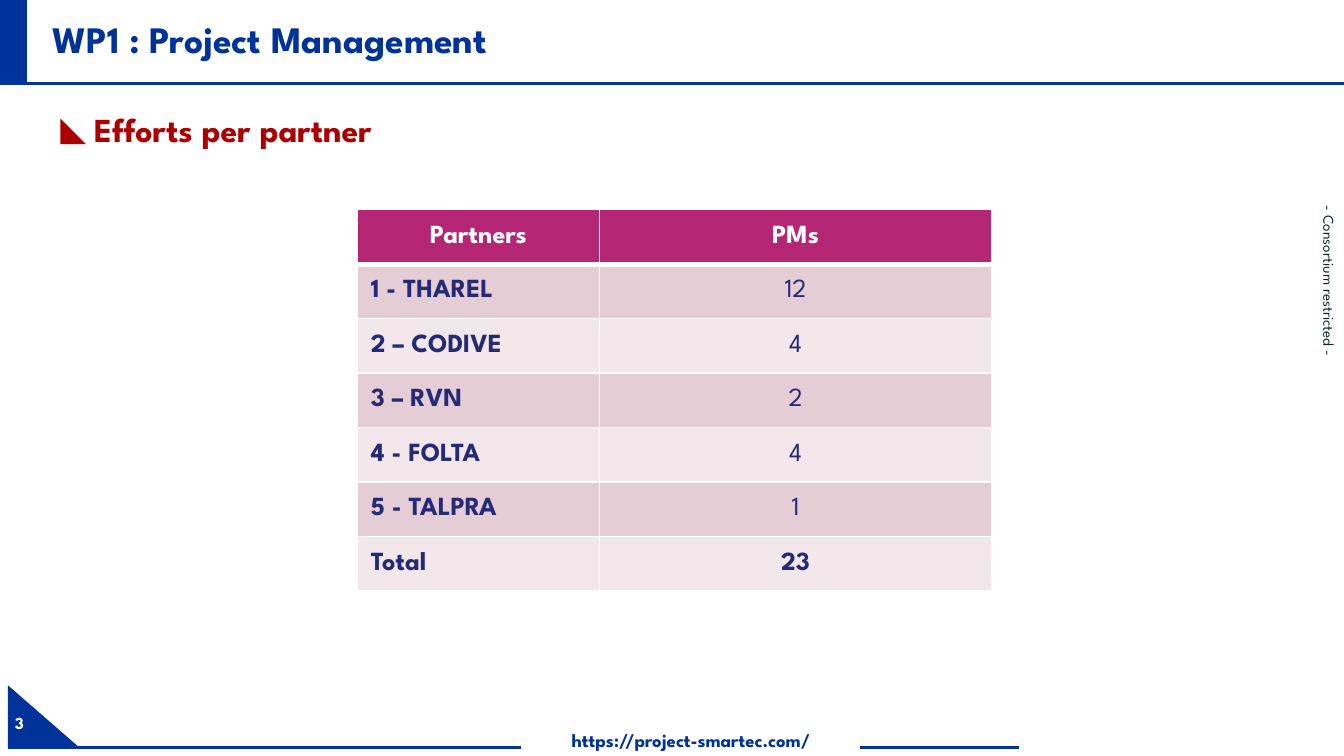
import pptx
import pptx.dml.color
import pptx.enum.shapes
import pptx.enum.text
import pptx.oxml.ns
import pptx.util
from lxml import etree

Inches = pptx.util.Inches
Pt = pptx.util.Pt
RGBColor = pptx.dml.color.RGBColor
SHAPE = pptx.enum.shapes.MSO_SHAPE
ALIGN = pptx.enum.text.PP_ALIGN
ANCHOR = pptx.enum.text.MSO_ANCHOR
qn = pptx.oxml.ns.qn

BLUE = RGBColor(0x00, 0x33, 0x99)
RED = RGBColor(0xAC, 0x00, 0x00)
NAVY = RGBColor(0x24, 0x2A, 0x75)
DARK = RGBColor(0x0C, 0x27, 0x2D)
MAGENTA = RGBColor(0xB4, 0x25, 0x73)
ROSE = RGBColor(0xE5, 0xCD, 0xD5)
PALE = RGBColor(0xF2, 0xE8, 0xEB)
WHITE = RGBColor(0xFF, 0xFF, 0xFF)

EFFORTS = [
    ("Partners", "PMs"),
    ("1 - THAREL", "12"),
    ("2 – CODIVE", "4"),
    ("3 – RVN", "2"),
    ("4 - FOLTA", "4"),
    ("5 - TALPRA", "1"),
    ("Total", "23"),
]


class Deck:
    """Holds the style and the current slide, and draws each kind of element."""

    font = "League Spartan"

    def __init__(self, width, height):
        self.prs = pptx.Presentation()
        self.prs.slide_width = Inches(width)
        self.prs.slide_height = Inches(height)
        self.s = self.prs.slides.add_slide(self.prs.slide_layouts[1])

    def run(self, p, text, size, color, bold=True):
        r = p.add_run()
        r.text = text
        r.font.name = self.font
        r.font.size = Pt(size)
        r.font.bold = bold
        r.font.color.rgb = color

    def shape(self, kind, *box):
        sp = self.s.shapes.add_shape(kind, *map(Inches, box))
        sp.shadow.inherit = False
        sp.fill.solid()
        sp.fill.fore_color.rgb = BLUE
        sp.line.fill.background()

    def line(self, x1, x2, y):
        c = self.s.shapes.add_connector(
            pptx.enum.shapes.MSO_CONNECTOR.STRAIGHT,
            Inches(x1), Inches(y), Inches(x2), Inches(y))
        c.line.color.rgb = BLUE
        c.line.width = Pt(1.5)
        etree.SubElement(c.element.spPr, qn("a:effectLst"))

    def text(self, box, insets, text, size, color, bold=True,
             align=ALIGN.LEFT, anchor=ANCHOR.TOP, vert=None):
        tf = self.s.shapes.add_textbox(*map(Inches, box)).text_frame
        tf.word_wrap = True
        tf.vertical_anchor = anchor
        tf.margin_left, tf.margin_top, tf.margin_right, tf.margin_bottom = map(Inches, insets)
        if vert:
            tf._txBody.bodyPr.set("vert", vert)
        p = tf.paragraphs[0]
        p.alignment = align
        self.run(p, text, size, color, bold)

    def placeholder(self, idx, box, anchor):
        sp = self.s.placeholders[idx]
        sp.left, sp.top, sp.width, sp.height = map(Inches, box)
        tf = sp.text_frame
        tf.auto_size = pptx.enum.text.MSO_AUTO_SIZE.NONE
        tf.vertical_anchor = anchor
        p = tf.paragraphs[0]
        p.alignment = ALIGN.LEFT
        p.space_before = Pt(0)
        return p

    def title(self, box, text):
        p = self.placeholder(0, box, ANCHOR.MIDDLE)
        p.line_spacing = 0.9
        self.run(p, text, 20, BLUE)

    def bullet(self, box, text):
        p = self.placeholder(1, box, ANCHOR.TOP)
        p.space_after = Pt(5.2)
        pPr = p._p.get_or_add_pPr()
        pPr.set("marL", str(Inches(0.4)))
        pPr.set("indent", str(Inches(-0.25)))
        clr = etree.SubElement(pPr, qn("a:buClr"))
        etree.SubElement(clr, qn("a:srgbClr"), val=str(RED))
        etree.SubElement(pPr, qn("a:buChar"), char="◣")
        self.run(p, text, 18, RED)

    def border(self, cell, side, width):
        tcPr = cell._tc.get_or_add_tcPr()
        ln = etree.SubElement(tcPr, qn("a:ln" + side), w=str(Pt(width)))
        fill = etree.SubElement(ln, qn("a:solidFill"))
        etree.SubElement(fill, qn("a:srgbClr"), val=str(WHITE))

    def table(self, box, widths, rows):
        tbl = self.s.shapes.add_table(len(rows), len(widths), *map(Inches, box)).table
        tbl.horz_banding = False
        for col, width in zip(tbl.columns, widths):
            col.width = Inches(width)
        for i, row in enumerate(rows):
            header = i == 0
            for j, text in enumerate(row):
                cell = tbl.cell(i, j)
                top = 3 if i == 1 else 1
                bottom = 3 if header else 1
                for side, width in zip("LRTB", (1, 1, top, bottom)):
                    self.border(cell, side, width)
                cell.fill.solid()
                cell.fill.fore_color.rgb = MAGENTA if header else ROSE if i % 2 else PALE
                cell.vertical_anchor = ANCHOR.MIDDLE
                p = cell.text_frame.paragraphs[0]
                p.alignment = ALIGN.CENTER if header or j else ALIGN.LEFT
                bold = j == 0 or i in (0, len(rows) - 1)
                self.run(p, text, 14, WHITE if header else NAVY, bold)


def main():
    d = Deck(10, 10 * 9 / 16)
    d.shape(SHAPE.RIGHT_TRIANGLE, 0.06, 5.1, 0.54, 0.47)
    d.text((0.04, 5.23, 0.43, 0.3), (0.07, 0.04, 0.07, 0.04), "3", 9, WHITE,
           anchor=ANCHOR.MIDDLE)
    d.line(-0.01, 10, 0.62)
    d.shape(SHAPE.RECTANGLE, 0, -0.02, 0.2, 0.63)
    d.text((3.88, 5.42, 2.52, 0.28), (0.1, 0, 0.1, 0), "https://project-smartec.com/",
           10, BLUE, align=ALIGN.CENTER)
    d.text((9.78, 1.53, 0.22, 2.65), (0.1, 0, 0.1, 0.05), "- Consortium restricted -",
           8, DARK, False, ALIGN.CENTER, ANCHOR.MIDDLE, "eaVert")
    d.line(6.4, 7.58, 5.56)
    d.line(0.06, 3.88, 5.56)
    d.bullet((0.2, 0.76, 9.58, 0.59), "Efforts per partner")
    d.title((0.29, 0, 9.49, 0.61), "WP1 : Project Management")
    d.table((2.66, 1.56, 4.72, 2.84), (1.8, 2.92), EFFORTS)
    d.prs.save("out.pptx")


if __name__ == "__main__":
    main()
